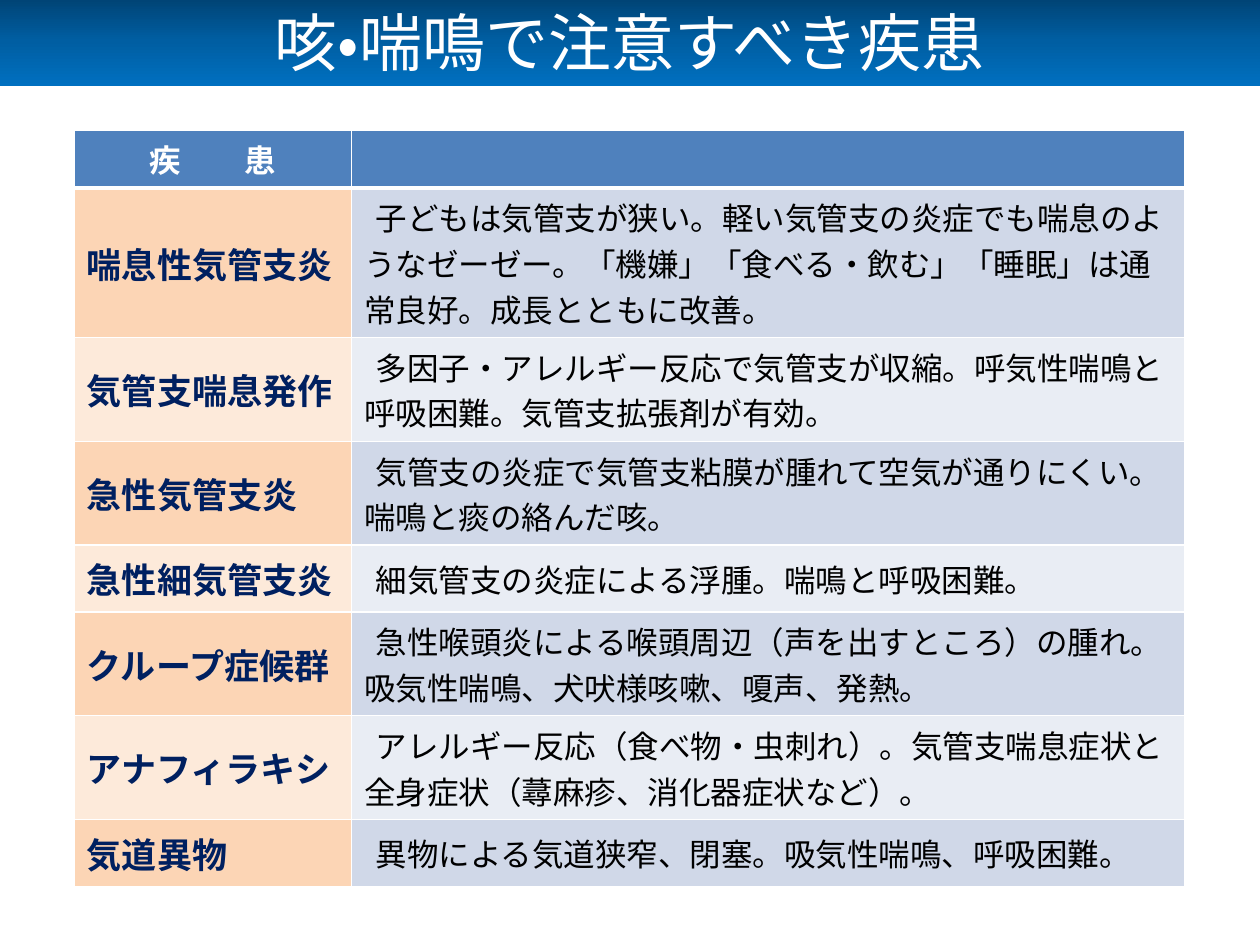
from lxml import etree
from pptx import Presentation
from pptx.dml.color import RGBColor
from pptx.enum import shapes, text
from pptx.oxml import parse_xml
from pptx.oxml.ns import nsdecls, qn
from pptx.util import Inches, Pt

LATIN = "Calibri"
JAPANESE = "Noto Sans CJK JP"
WHITE, NAVY, BLACK, HEADER_BLUE = "FFFFFF", "002060", "000000", "4F81BD"
NAME_BANDS = ("FCD5B5", "FDEADA")
NOTE_BANDS = ("D0D8E8", "E9EDF4")
TITLE_STOPS = ((0, "004272"), (50, "005EA2"), (100, "0070C0"))

TITLE = "咳・喘鳴で注意すべき疾患"
HEADING = "疾　　患"
DISEASES = [
    ("喘息性気管支炎", 1.17, "子どもは気管支が狭い。軽い気管支の炎症でも喘息のようなゼーゼー。"
     "「機嫌」「食べる・飲む」「睡眠」は通常良好。成長とともに改善。"),
    ("気管支喘息発作", 0.81, "多因子・アレルギー反応で気管支が収縮。呼気性喘鳴と呼吸困難。"
     "気管支拡張剤が有効。"),
    ("急性気管支炎", 0.81, "気管支の炎症で気管支粘膜が腫れて空気が通りにくい。喘鳴と痰の絡んだ咳。"),
    ("急性細気管支炎", 0.53, "細気管支の炎症による浮腫。喘鳴と呼吸困難。"),
    ("クループ症候群", 0.81, "急性喉頭炎による喉頭周辺（声を出すところ）の腫れ。"
     "吸気性喘鳴、犬吠様咳嗽、嗄声、発熱。"),
    ("アナフィラキシ", 0.81, "アレルギー反応（食べ物・虫刺れ）。気管支喘息症状と全身症状"
     "（蕁麻疹、消化器症状など）。"),
    ("気道異物", 0.53, "異物による気道狭窄、閉塞。吸気性喘鳴、呼吸困難。"),
]


def rgb(hex_color):
    return RGBColor.from_string(hex_color)


def write(frame, content, size, color, align, font=LATIN, bold=False):
    frame.text = content
    paragraph = frame.paragraphs[0]
    paragraph.alignment = align
    run = paragraph.runs[0]
    run.font.size = Pt(size)
    run.font.name = font
    run.font.bold = bold
    run.font.color.rgb = rgb(color)
    run._r.get_or_add_rPr().set("lang", "ja-JP")
    if font == JAPANESE:
        latin = run._r.rPr.find(qn("a:latin"))
        east_asian = etree.Element(qn("a:ea"), typeface=font)
        latin.addnext(east_asian)
    return paragraph


def fill_gradient(shape, stops):
    """Fill a shape from top to bottom through (percent, colour) stops."""
    stop_xml = "".join(
        f'<a:gs pos="{percent * 1000}"><a:srgbClr val="{color}"/></a:gs>'
        for percent, color in stops)
    gradient = parse_xml(
        f'<a:gradFill {nsdecls("a")} rotWithShape="1"><a:gsLst>{stop_xml}</a:gsLst>'
        '<a:lin ang="5400000" scaled="0"/></a:gradFill>')
    shape._element.spPr.find(qn("a:prstGeom")).addnext(gradient)


def add_title(slide):
    banner = slide.shapes.add_shape(
        shapes.MSO_SHAPE.RECTANGLE, Inches(0), Inches(-0.03), Inches(10), Inches(0.71))
    banner.shadow.inherit = False
    banner.line.fill.background()
    fill_gradient(banner, TITLE_STOPS)
    banner.text_frame.vertical_anchor = text.MSO_ANCHOR.MIDDLE
    write(banner.text_frame, TITLE, 36, WHITE, text.PP_ALIGN.CENTER)


def style_cell(cell, fill, top=1, bottom=1):
    """Set a cell's fill, anchor and white borders; widths are in points."""
    cell.vertical_anchor = text.MSO_ANCHOR.MIDDLE
    properties = cell._tc.get_or_add_tcPr()
    for side, width in (("L", 1), ("R", 1), ("T", top), ("B", bottom)):
        properties.append(parse_xml(
            f'<a:ln{side} {nsdecls("a")} w="{Pt(width)}"><a:solidFill>'
            f'<a:srgbClr val="{WHITE}"/></a:solidFill></a:ln{side}>'))
    cell.fill.solid()
    cell.fill.fore_color.rgb = rgb(fill)


def add_disease_table(slide):
    heights = [0.41] + [height for _, height, _ in DISEASES]
    widths = [2.2, 6.61]
    table = slide.shapes.add_table(
        len(heights), len(widths), Inches(0.59), Inches(1.03),
        Inches(sum(widths)), Inches(sum(heights))).table
    for column, width in zip(table.columns, widths):
        column.width = Inches(width)
    for row, height in zip(table.rows, heights):
        row.height = Inches(height)

    for cell in table.rows[0].cells:
        style_cell(cell, HEADER_BLUE, bottom=3)
    write(table.cell(0, 0).text_frame, HEADING, 18, WHITE,
          text.PP_ALIGN.CENTER, bold=True)

    for number, (name, _, note) in enumerate(DISEASES, start=1):
        band = (number - 1) % 2
        name_cell, note_cell = table.cell(number, 0), table.cell(number, 1)
        top = 3 if number == 1 else 1
        style_cell(name_cell, NAME_BANDS[band], top)
        style_cell(note_cell, NOTE_BANDS[band], top)
        write(name_cell.text_frame, name, 20, NAVY, text.PP_ALIGN.JUSTIFY, bold=True)
        paragraph = write(note_cell.text_frame, note, 18, BLACK,
                          text.PP_ALIGN.LEFT, JAPANESE)
        paragraph._p.get_or_add_pPr().set("indent", str(Inches(0.09)))


def main():
    deck = Presentation()
    deck.slide_width, deck.slide_height = Inches(10), Inches(7.5)
    slide = deck.slides.add_slide(deck.slide_layouts[6])
    add_title(slide)
    add_disease_table(slide)
    deck.save("out.pptx")


if __name__ == "__main__":
    main()
